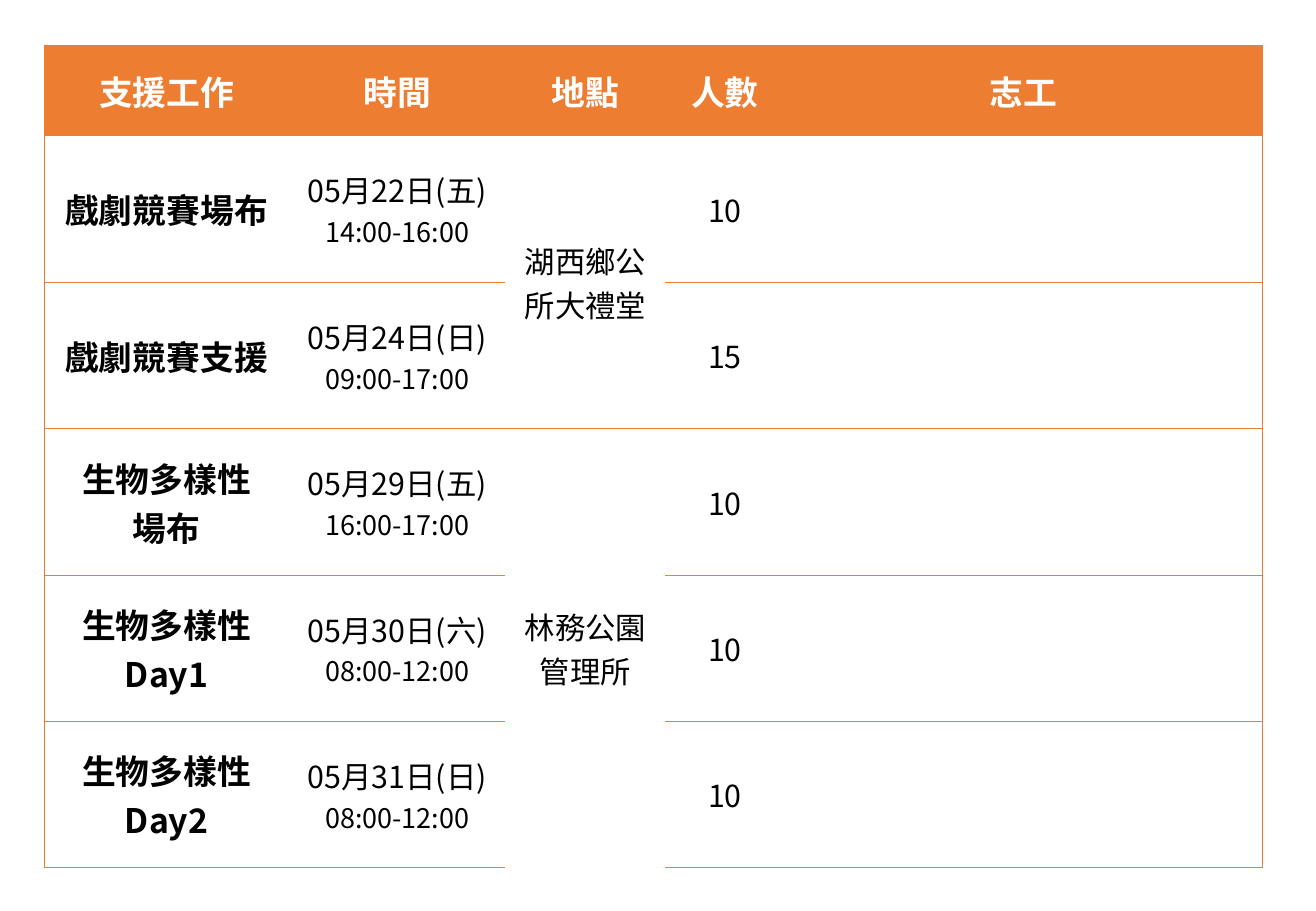
from dataclasses import dataclass
from lxml.etree import SubElement
from pptx import Presentation
from pptx.dml.color import RGBColor as Color
from pptx.enum.text import MSO_ANCHOR as Anchor, PP_ALIGN as Align
from pptx.oxml.ns import qn
from pptx.util import Pt


@dataclass(frozen=True)
class Theme:
    font: str = "Noto Sans CJK TC"
    accent: str = "ED7D31"
    light: str = "FFFFFF"
    dark: str = "000000"
    title_size: int = 20
    body_size: int = 18
    time_size: int = 16
    gap_size: int = 10
    rule_width: float = 0.5


THEME = Theme()
NO_STYLE = "{2D5ABB26-0587-4C30-8999-92F81FD0307C}"
COLUMN_WIDTHS = (145.2, 128.2, 94.8, 70.6, 283.4)
HEADER_HEIGHT = 53.5
PLACE_COLUMN = 2
HEADERS = ("支援工作", "時間", "地點", "人數", "志工")
# Task, date, time, time on its own line, head count
SHIFTS = (
    ("戲劇競賽場布", "05月22日(五)", "14:00-16:00", True, "10"),
    ("戲劇競賽支援", "05月24日(日)", "09:00-17:00", True, "15"),
    ("生物多樣性\v場布", "05月29日(五)", "16:00-17:00", True, "10"),
    ("生物多樣性Day1", "05月30日(六)", "08:00-12:00", False, "10"),
    ("生物多樣性Day2", "05月31日(日)", "08:00-12:00", False, "10"),
)
# Place, first row, last row
PLACES = (("湖西鄉公所大禮堂", 1, 2), ("林務公園管理所", 3, 5))


def write(cell, lines, color=THEME.dark, bold=False):
    """Fill a cell with paragraphs, each a list of (text, size) pieces."""
    frame = cell.text_frame
    for index, pieces in enumerate(lines):
        para = frame.add_paragraph() if index else frame.paragraphs[0]
        para.alignment = Align.CENTER
        for text, size in pieces:
            done = len(para.runs)
            if done:
                para.add_run().text = text
            else:
                para.text = text
            for span in para.runs[done:]:
                span.font.size = Pt(size)
                span.font.bold = bold
                span.font.name = THEME.font
                span.font.color.rgb = Color.from_string(color)
                SubElement(span.font._element, qn("a:ea"), typeface=THEME.font)


def rule(cell, sides):
    """Draw the given sides, in the order L, R, T, B."""
    properties = cell._tc.get_or_add_tcPr()
    for index, side in enumerate(sides):
        line = SubElement(properties, qn(f"a:ln{side}"), w=str(Pt(THEME.rule_width)))
        fill = SubElement(line, qn("a:solidFill"))
        SubElement(fill, qn("a:srgbClr"), val=THEME.accent)
        properties.insert(index, line)


def style_cells(table):
    last_row, last_column = len(table.rows) - 1, len(table.columns) - 1
    for row in range(last_row + 1):
        for column in range(last_column + 1):
            cell = table.cell(row, column)
            cell.vertical_anchor = Anchor.MIDDLE
            cell.margin_left = cell.margin_right = Pt(3)
            cell.margin_top = cell.margin_bottom = 0
            if row == 0:
                cell.fill.solid()
                cell.fill.fore_color.rgb = Color.from_string(THEME.accent)
            else:
                cell.fill.background()
            sides = (("L", column == 0), ("R", column == last_column),
                     ("T", not cell.is_spanned), ("B", row == last_row))
            rule(cell, [side for side, drawn in sides if drawn])


def add_schedule(page, left, top, width, height):
    frame = page.shapes.add_table(len(SHIFTS) + 1, len(HEADERS),
                                  Pt(left), Pt(top), Pt(width), Pt(height))
    table = frame.table
    table.horz_banding = False
    table._tbl.tblPr.find(qn("a:tableStyleId")).text = NO_STYLE
    for column, share in zip(table.columns, COLUMN_WIDTHS):
        column.width = Pt(width * share / sum(COLUMN_WIDTHS))
    for index, row in enumerate(table.rows):
        row.height = Pt((height - HEADER_HEIGHT) / len(SHIFTS) if index else HEADER_HEIGHT)

    for place, first, last in PLACES:
        origin = table.cell(first, PLACE_COLUMN)
        origin.merge(table.cell(last, PLACE_COLUMN))
        write(origin, [[(place, THEME.body_size)]])
    style_cells(table)

    for column, header in enumerate(HEADERS):
        write(table.cell(0, column), [[(header, THEME.title_size)]], THEME.light, True)
    for row, (task, date, time, own_line, count) in enumerate(SHIFTS, 1):
        day, hours = (date, THEME.body_size), (time, THEME.time_size)
        when = [[day], [hours]] if own_line else [[day, (" ", THEME.gap_size), hours]]
        write(table.cell(row, 0), [[(task, THEME.title_size)]], bold=True)
        write(table.cell(row, 1), when)
        write(table.cell(row, 3), [[(count, THEME.body_size)]])


def main():
    deck = Presentation()
    deck.slide_width, deck.slide_height = Pt(780), Pt(540)
    page = deck.slides.add_slide(deck.slide_layouts[6])
    add_schedule(page, 26.2, 27, 722.2, 487.4)
    deck.save("out.pptx")


if __name__ == "__main__":
    main()
